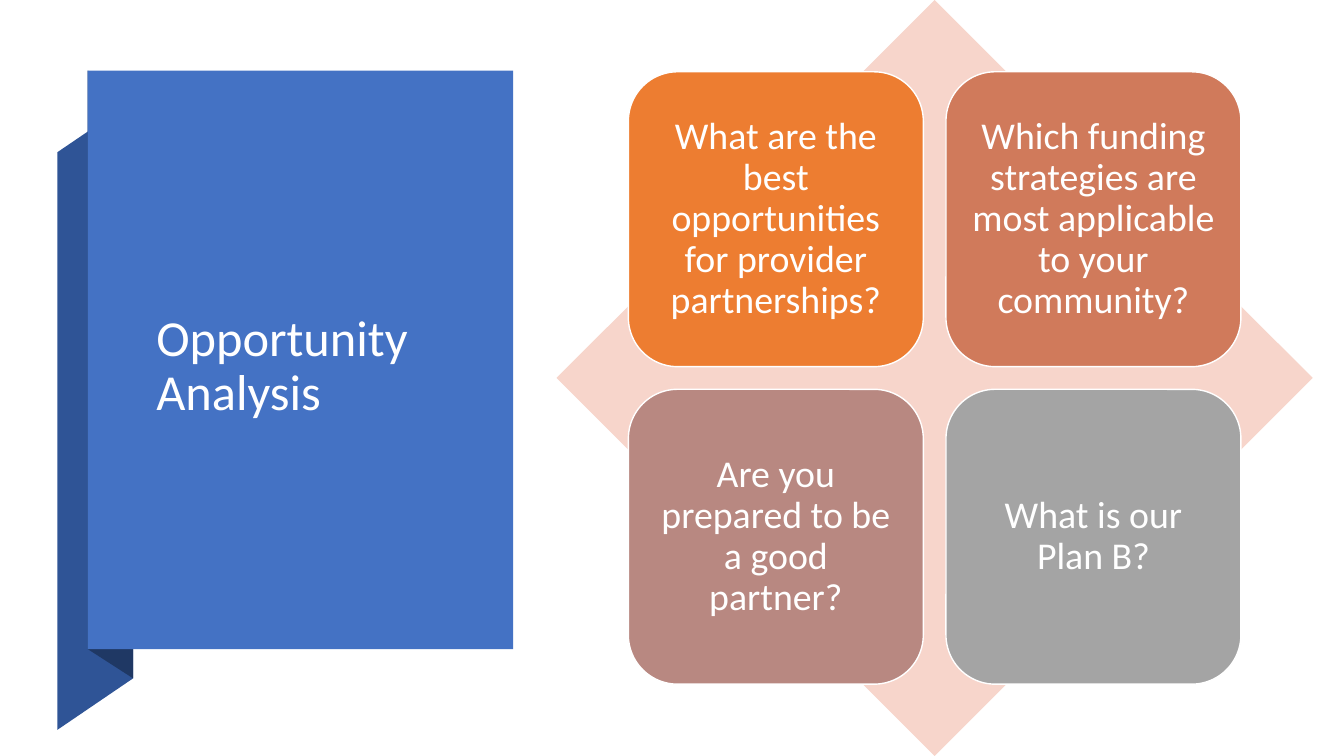
from pptx import Presentation
from pptx import util as u
from pptx.dml.color import RGBColor
from pptx.enum import shapes, text

WHITE = RGBColor(0xFF, 0xFF, 0xFF)
BLUE = RGBColor(0x44, 0x72, 0xC4)
NAVY = RGBColor(0x2F, 0x54, 0x96)
DARK = RGBColor(0x1F, 0x38, 0x64)
PINK = RGBColor(0xF7, 0xD5, 0xCB)

CARDS = [
    ("What are the best opportunities for provider partnerships?",
     RGBColor(0xED, 0x7D, 0x31)),
    ("Which funding strategies are most applicable to your community?",
     RGBColor(0xD0, 0x7A, 0x5B)),
    ("Are you prepared to be a good partner?", RGBColor(0xB8, 0x88, 0x81)),
    ("What is our Plan B?", RGBColor(0xA4, 0xA4, 0xA4)),
]


def paint(shape, fill, line=None):
    shape.shadow.inherit = False
    shape.fill.solid()
    shape.fill.fore_color.rgb = fill
    if line is None:
        shape.line.fill.background()
    else:
        shape.line.color.rgb = line
        shape.line.width = u.Pt(1)
    return shape


def place(slide, kind, box, fill, line=None):
    """Add a preset shape in a box given in inches."""
    shape = slide.shapes.add_shape(kind, *map(u.Inches, box))
    return paint(shape, fill, line)


def trace(slide, points, fill):
    """Add a closed outline through points given in inches."""
    spots = [(u.Inches(x), u.Inches(y)) for x, y in points]
    pen = slide.shapes.build_freeform(*spots[0])
    pen.add_line_segments(spots[1:], close=True)
    paint(pen.convert_to_shape(), fill)


def write(shape, words, size, align, inset):
    frame = shape.text_frame
    frame.text = words
    pad = [u.Inches(n) for n in inset]
    form = {"word_wrap": True, "auto_size": text.MSO_AUTO_SIZE.NONE,
            "vertical_anchor": text.MSO_ANCHOR.MIDDLE,
            "margin_left": pad[0], "margin_right": pad[0],
            "margin_top": pad[1], "margin_bottom": pad[1]}
    for name, value in form.items():
        setattr(frame, name, value)
    para = frame.paragraphs[0]
    para.alignment, para.line_spacing = align, 0.9
    font = para.runs[0].font
    for name, value in {"name": "Calibri", "size": u.Pt(size)}.items():
        setattr(font, name, value)
    font.color.rgb = WHITE


def banner(slide, box, words):
    """Draw the folded ribbon, its front panel and the title."""
    left, top, wide, high = box
    edge, fold = left + 0.3, left + 0.75
    drop, base = 0.3, top + high
    trace(slide, [(left, base), (fold, base - 0.51),
                  (fold, top + drop), (left, top + drop + 0.51)], NAVY)
    foot = base - 0.8
    trace(slide, [(edge, foot), (fold, foot + drop - 0.01),
                  (fold, top + drop - 0.01), (edge, top)], DARK)
    front = wide - 0.3
    place(slide, shapes.MSO_SHAPE.RECTANGLE,
          (edge, top, front, foot - top), BLUE)

    title = slide.shapes.title
    spot = {"left": edge + 0.58, "top": top + 0.97,
            "width": 3.01, "height": 3.94}
    for name, value in spot.items():
        setattr(title, name, u.Inches(value))
    write(title, words, 36, text.PP_ALIGN.LEFT, (0.1, 0.05))
    title.element.getparent().append(title.element)


def matrix(slide, box, cards):
    """Draw a diamond with a two by two grid of cards over it."""
    left, top, side = box
    place(slide, shapes.MSO_SHAPE.DIAMOND, (left, top, side, side), PINK)
    card, step, edge = 0.39 * side, 0.42 * side, 0.095 * side
    for i, (words, fill) in enumerate(cards):
        row, col = divmod(i, 2)
        spot = (left + edge + col * step, top + edge + row * step, card, card)
        shape = place(slide, shapes.MSO_SHAPE.ROUNDED_RECTANGLE,
                      spot, fill, WHITE)
        shape.adjustments[0] = 0.167
        write(shape, words, 27, text.PP_ALIGN.CENTER, (0.11, 0.11))


def main():
    deck = Presentation()
    deck.slide_width, deck.slide_height = u.Inches(13.33), u.Inches(7.5)
    slide = deck.slides.add_slide(deck.slide_layouts.get_by_name("Title Only"))
    banner(slide, (0.57, 0.7, 4.52, 6.54), "Opportunity Analysis")
    matrix(slide, (5.52, 0, 7.5), CARDS)
    deck.save("out.pptx")


if __name__ == "__main__":
    main()
